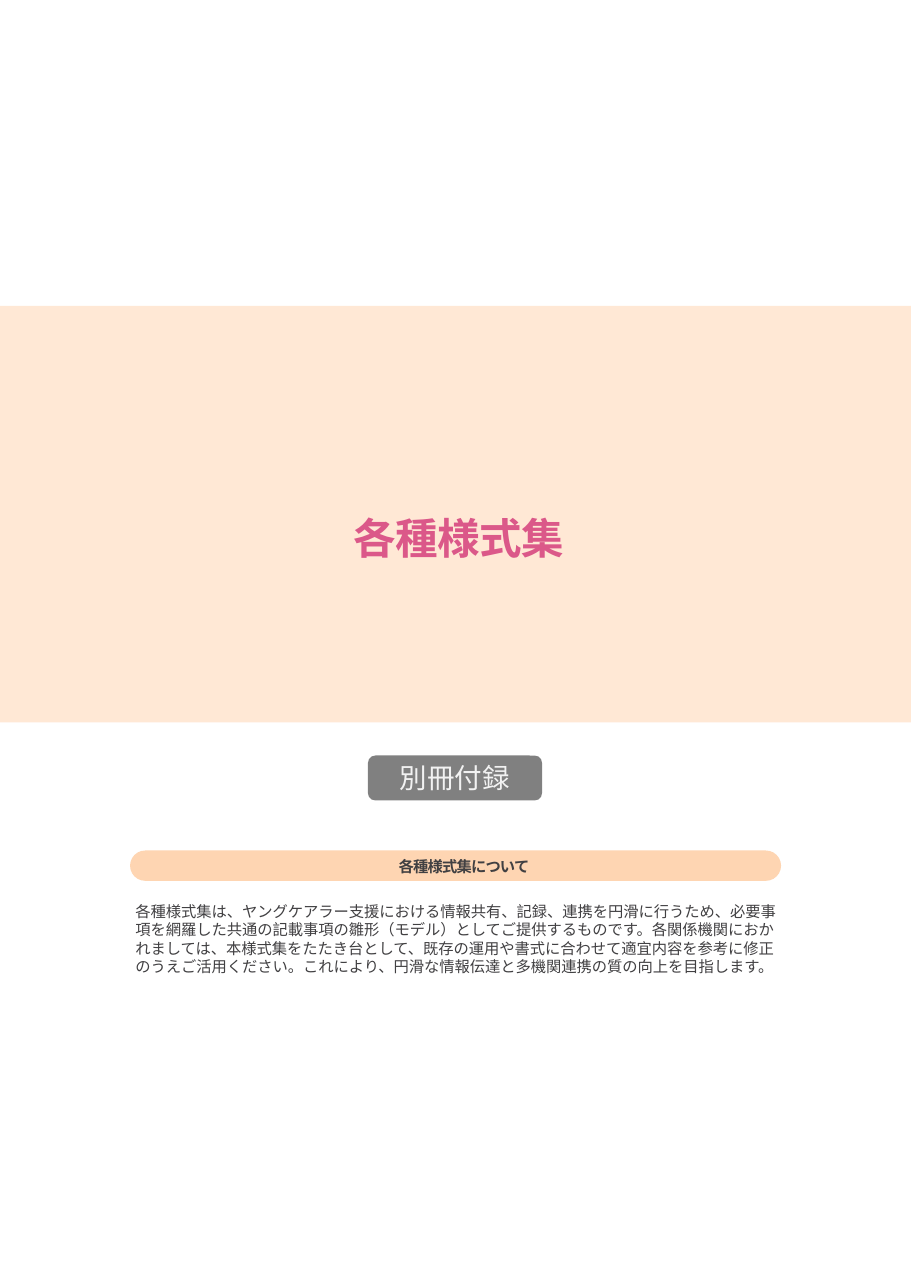
from lxml import etree
from pptx import Presentation
from pptx.dml.color import RGBColor
from pptx.enum.shapes import MSO_SHAPE
from pptx.enum.text import MSO_ANCHOR, PP_ALIGN
from pptx.oxml.ns import qn
from pptx.util import Pt

RECT, ROUNDED = MSO_SHAPE.RECTANGLE, MSO_SHAPE.ROUNDED_RECTANGLE
TOP, MIDDLE = MSO_ANCHOR.TOP, MSO_ANCHOR.MIDDLE
LEFT, CENTER = PP_ALIGN.LEFT, PP_ALIGN.CENTER
COLORS = {"band": "FFE8D5", "badge": "808080", "pill": "FED5B2",
          "title": "DB5889", "badge_text": "F2F2F2", "body": "414042"}
JP_FONT = "Noto Sans CJK JP"
PAGE_W, PAGE_H = 595.44, 841.68


def write(sp, text, size=10, color="body", font=JP_FONT, bold=False, align=LEFT,
          anchor=TOP, margins=(7.2, 3.6, 7.2, 3.6), indent=(0, 0), spacing=0,
          baseline=0, line=1.0):
    """Fill sp with one paragraph; indent is (left, first line) in points."""
    tf = sp.text_frame
    tf.word_wrap = True
    tf.vertical_anchor = anchor
    tf.margin_left, tf.margin_top, tf.margin_right, tf.margin_bottom = map(Pt, margins)
    p = tf.paragraphs[0]
    p.alignment, p.line_spacing, p.space_before = align, line, Pt(0)
    pPr = p._p.get_or_add_pPr()
    pPr.set("marL", str(Pt(indent[0])))
    pPr.set("indent", str(Pt(indent[1])))
    r = p.add_run()
    r.text = text
    r.font.size, r.font.bold, r.font.name = Pt(size), bold, font
    r.font.color.rgb = RGBColor.from_string(COLORS[color])
    rPr = r._r.get_or_add_rPr()
    rPr.set("spc", str(round(spacing * 100)))
    if baseline:
        rPr.set("baseline", str(baseline * 1000))
    etree.SubElement(rPr, qn("a:ea")).set("typeface", font)


def add_panel(kind, x, y, w, h, color):
    sp = s.shapes.add_shape(kind, Pt(x), Pt(y), Pt(w), Pt(h))
    sp.shadow.inherit = False
    sp.fill.solid()
    sp.fill.fore_color.rgb = RGBColor.from_string(COLORS[color])
    sp.line.fill.background()
    return sp


prs = Presentation()
prs.slide_width, prs.slide_height = Pt(PAGE_W), Pt(PAGE_H)
s = prs.slides.add_slide(prs.slide_layouts[5])

band = add_panel(RECT, 0, 199.8, PAGE_W, 272.2, "band")
title = s.shapes.title
band._element.addnext(title._element)
title.left, title.top, title.width, title.height = Pt(86.4), Pt(303.8), Pt(426.2), Pt(119.5)
write(title, "各種様式集", size=48, color="title", bold=True, align=CENTER,
      margins=(0, 0.9, 0, 0), indent=(2.2, -1.4), spacing=-0.4, baseline=-12, line=1.07)

badge = add_panel(ROUNDED, 240.5, 493.7, 113.8, 29.4, "badge")
write(badge, "別冊付録", size=18, color="badge_text", font="Calibri",
      align=CENTER, anchor=MIDDLE)

pill = add_panel(ROUNDED, 85, 555.8, 425.5, 19.8, "pill")
pill.adjustments[0] = 0.5

heading = s.shapes.add_textbox(Pt(105.1), Pt(559.4), Pt(322.6), Pt(13))
write(heading, "各種様式集について", bold=True, margins=(0, 0.9, 0, 0),
      indent=(155.5, 0), spacing=-0.5)

body = s.shapes.add_textbox(Pt(81.4), Pt(586.1), Pt(436.3), Pt(55.4))
write(body, "各種様式集は、ヤングケアラー支援における情報共有、記録、連携を円滑に行うため、"
      "必要事項を網羅した共通の記載事項の雛形（モデル）としてご提供するものです。"
      "各関係機関におかれましては、本様式集をたたき台として、既存の運用や書式に合わせて"
      "適宜内容を参考に修正のうえご活用ください。これにより、円滑な情報伝達と"
      "多機関連携の質の向上を目指します。")

prs.save("out.pptx")
